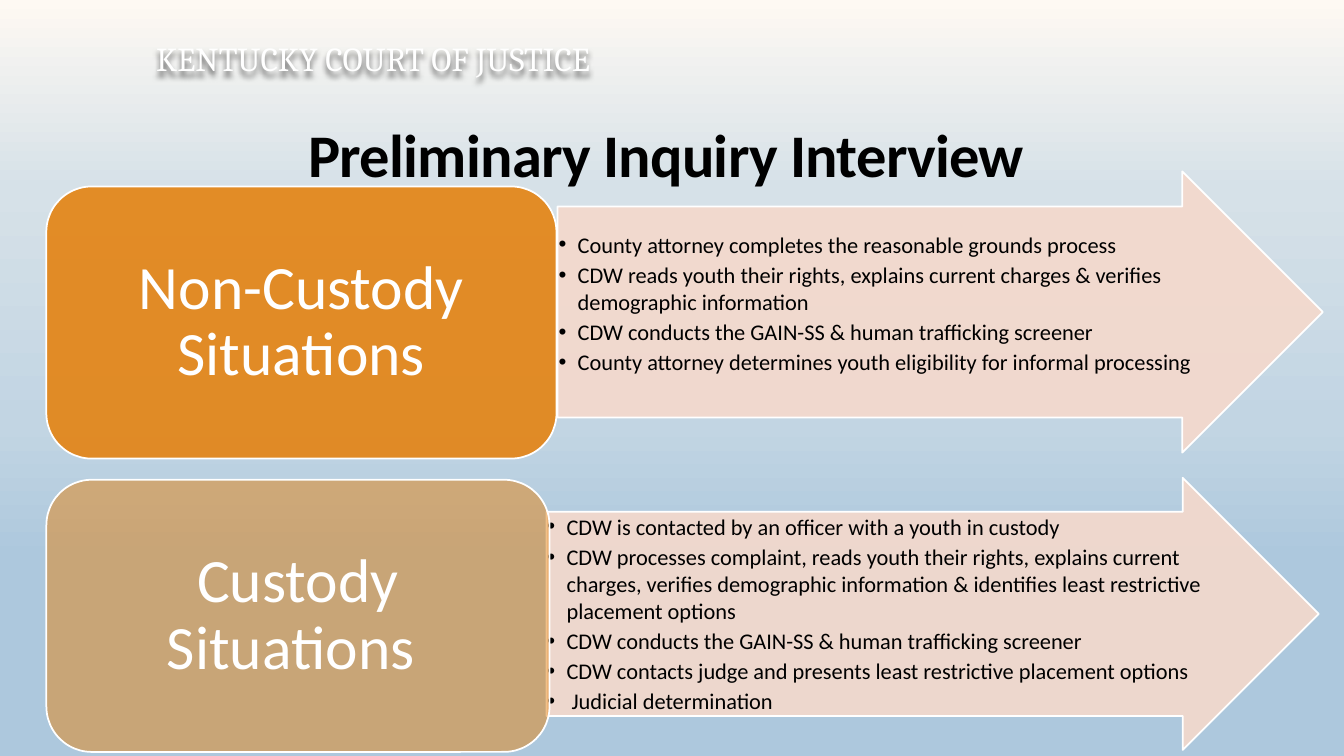
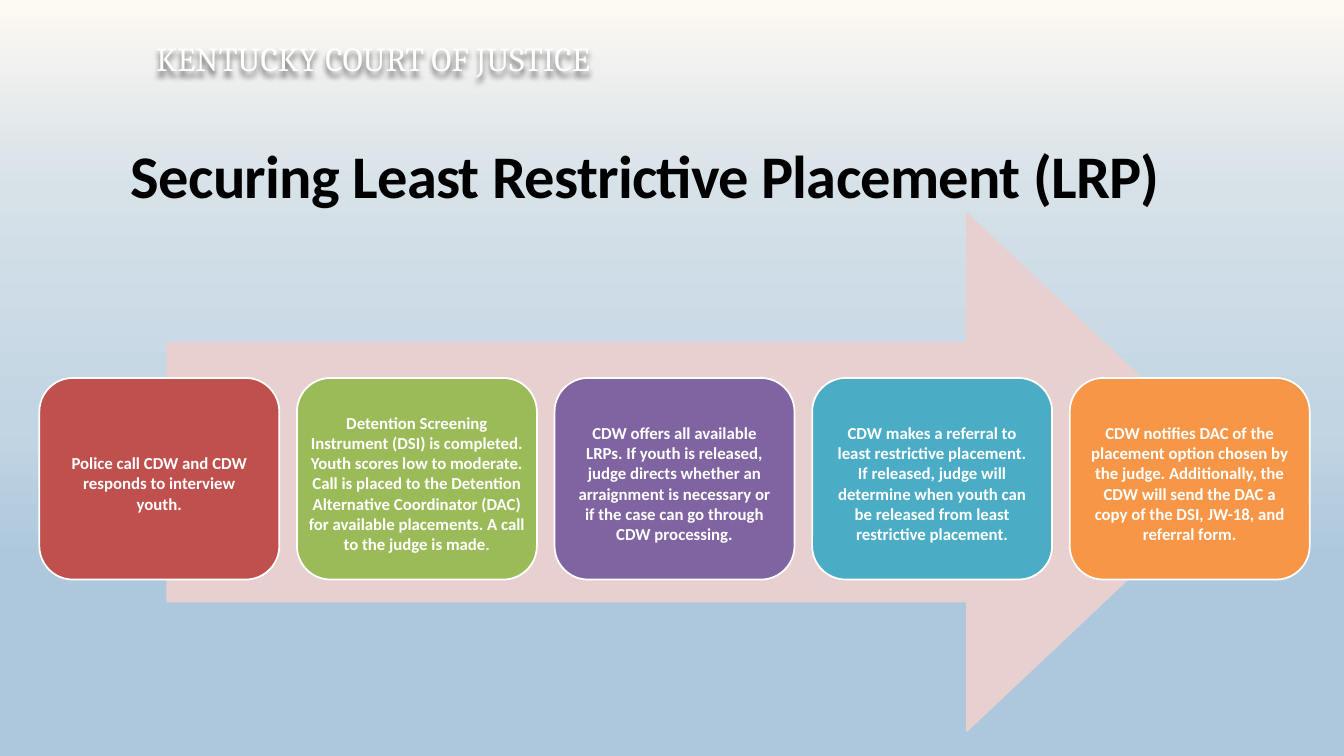
from lxml import etree
from pptx import Presentation
from pptx.dml.color import RGBColor
from pptx.enum.shapes import MSO_SHAPE as Preset
from pptx.enum.text import MSO_ANCHOR as Anchor, PP_ALIGN as Align
from pptx.oxml.ns import qn
from pptx.util import Inches, Pt

WHITE = RGBColor(0xFF, 0xFF, 0xFF)
BLACK = RGBColor(0x00, 0x00, 0x00)
ORANGE = RGBColor(0xE4, 0x83, 0x12)
PEACH = RGBColor(0xF5, 0xD9, 0xCC)
ROSE = RGBColor(0xE8, 0xD0, 0xD0)
RED = RGBColor(0xC0, 0x50, 0x4D)
GREEN = RGBColor(0x9B, 0xBB, 0x59)
PURPLE = RGBColor(0x80, 0x64, 0xA2)
TEAL = RGBColor(0x4B, 0xAC, 0xC6)
AMBER = RGBColor(0xF7, 0x96, 0x46)
SKY = [
    (0, RGBColor(0xFE, 0xF9, 0xF3)),
    (25, RGBColor(0xD6, 0xE1, 0xE8)),
    (56, RGBColor(0xC2, 0xD5, 0xE3)),
    (74, RGBColor(0xAD, 0xC8, 0xDD)),
]
BODY_FONT = "Calibri"
HEADER_FONT = "Cambria"

SITUATIONS = [
    {
        "label": "Non-Custody Situations",
        "label_box": (0.46, 1.85, 5.06, 2.7),
        "opacity": 90,
        "arrow_box": (5.53, 1.7, 7.59, 2.79),
        "top_inset": 0.24,
        "steps": [
            "County attorney completes the reasonable grounds process",
            "CDW reads youth their rights, explains current charges & verifies demographic information",
            "CDW conducts the GAIN-SS & human trafficking screener",
            "County attorney determines youth eligibility for informal processing",
        ],
    },
    {
        "label": "Custody Situations ",
        "label_box": (0.46, 4.76, 4.99, 2.7),
        "opacity": 50,
        "arrow_box": (5.42, 4.74, 7.66, 2.7),
        "top_inset": 0.01,
        "steps": [
            "CDW is contacted by an officer with a youth in custody",
            "CDW processes complaint, reads youth their rights, explains current charges, verifies demographic information & identifies least restrictive placement options",
            "CDW conducts the GAIN-SS & human trafficking screener",
            "CDW contacts judge and presents least restrictive placement options",
            " Judicial determination",
        ],
    },
]

PLACEMENT_STEPS = [
    (RED, 0.17, ["Police call CDW and CDW responds to interview youth."]),
    (GREEN, 0, [
        "Detention Screening Instrument (DSI) is completed. Youth scores low to moderate. "
        "Call is placed to the Detention Alternative Coordinator (DAC) for available "
        "placements. A call to the judge is made."]),
    (PURPLE, 0.09, [
        "CDW offers all available LRPs. If youth is released, judge directs whether an "
        "arraignment is necessary or if the case can go through CDW processing."]),
    (TEAL, 0.09, [
        "CDW makes a referral to least restrictive placement.",
        "If released, judge will determine when youth can be released from least "
        "restrictive placement."]),
    (AMBER, 0.09, [
        "CDW notifies DAC of the placement option chosen by the judge. Additionally, the "
        "CDW will send the DAC a copy of the DSI, JW-18, and referral form."]),
]


def set_background(master):
    """Give every slide the vertical sky gradient."""
    fill = master.background.fill
    fill.gradient()
    fill.gradient_angle = 270
    stops = next(master.element.iter(qn("a:gsLst")))
    for stop in list(stops):
        stops.remove(stop)
    for position, color in SKY:
        stop = etree.SubElement(stops, qn("a:gs"), pos=str(position * 1000))
        etree.SubElement(stop, qn("a:srgbClr"), val=str(color))


def add_run(paragraph, text, size, color, bold=False, font=BODY_FONT):
    """Append a formatted run to a paragraph and return it."""
    run = paragraph.add_run()
    run.text = text
    run.font.name = font
    run.font.size = Pt(size)
    run.font.bold = bold
    run.font.color.rgb = color
    return run


def set_frame(frame, anchor, insets):
    """Set wrapping, anchor and left, top, right, bottom insets."""
    frame.word_wrap = True
    frame.vertical_anchor = anchor
    left, top, right, bottom = map(Inches, insets)
    frame.margin_left, frame.margin_top = left, top
    frame.margin_right, frame.margin_bottom = right, bottom


def add_paragraphs(frame, texts):
    """Yield each text with a fresh paragraph of the frame."""
    for index, text in enumerate(texts):
        yield (frame.add_paragraph() if index else frame.paragraphs[0]), text


def add_panel(slide, preset, box, color, line=WHITE, opacity=100, adjustments=()):
    """Draw a filled, outlined preset shape."""
    panel = slide.shapes.add_shape(preset, *map(Inches, box))
    panel.shadow.inherit = False
    panel.fill.solid()
    panel.fill.fore_color.rgb = color
    if opacity < 100:
        tint = panel.fill._xPr.find(qn("a:solidFill"))[0]
        etree.SubElement(tint, qn("a:alpha"), val=str(opacity * 1000))
    panel.line.color.rgb = line
    panel.line.width = Pt(1.25)
    for index, value in enumerate(adjustments):
        panel.adjustments[index] = value
    return panel


def add_header(slide):
    """Place the court name with its soft shadow."""
    header = slide.shapes.add_textbox(*map(Inches, (1.45, 0.33, 7.79, 0.5)))
    set_frame(header.text_frame, Anchor.TOP, (0.1, 0.05, 0.1, 0.05))
    add_run(header.text_frame.paragraphs[0], "KENTUCKY COURT OF JUSTICE", 24, WHITE, font=HEADER_FONT)
    effects = etree.SubElement(header._element.spPr, qn("a:effectLst"))
    shadow = etree.SubElement(effects, qn("a:outerShdw"), blurRad="50800", dist="38100",
                              dir="5400000", algn="t", rotWithShape="0")
    shade = etree.SubElement(shadow, qn("a:srgbClr"), val=str(BLACK))
    etree.SubElement(shade, qn("a:alpha"), val="60000")


def add_title(slide, text, left, top, align):
    """Place the bold slide title."""
    title = slide.shapes.add_textbox(*map(Inches, (left, top, 11, 0.78)))
    set_frame(title.text_frame, Anchor.BOTTOM, (0.1, 0.05, 0.1, 0.05))
    paragraph = title.text_frame.paragraphs[0]
    paragraph.alignment = align
    paragraph.line_spacing = 0.85
    run = add_run(paragraph, text, 43.2, BLACK, bold=True)
    run.font._element.set("spc", "-50")


def start_slide(prs, title, left, top, align):
    """Add a blank slide with header and title."""
    slide = prs.slides.add_slide(prs.slide_layouts[6])
    add_header(slide)
    add_title(slide, title, left, top, align)
    return slide


def add_steps_arrow(slide, box, steps, top_inset):
    """Draw an arrow holding a bulleted list of steps."""
    arrow = add_panel(slide, Preset.RIGHT_ARROW, box, PEACH, opacity=90, adjustments=(0.75, 0.5))
    set_frame(arrow.text_frame, Anchor.TOP, (0.01, top_inset, 0.01, 0.01))
    for paragraph, step in add_paragraphs(arrow.text_frame, steps):
        properties = paragraph._p.get_or_add_pPr()
        properties.set("marL", str(Inches(0.19)))
        properties.set("indent", str(-Inches(0.19)))
        etree.SubElement(properties, qn("a:buFont"), typeface="Arial")
        etree.SubElement(properties, qn("a:buChar"), char="•")
        paragraph.alignment = Align.LEFT
        paragraph.space_after = Pt(2.4)
        add_run(paragraph, step, 16, BLACK)


def add_situation_label(slide, box, label, opacity):
    """Draw the large rounded label of a situation."""
    panel = add_panel(slide, Preset.ROUNDED_RECTANGLE, box, ORANGE, opacity=opacity)
    set_frame(panel.text_frame, Anchor.MIDDLE, (0.18, 0.09, 0.18, 0.09))
    paragraph = panel.text_frame.paragraphs[0]
    paragraph.alignment = Align.CENTER
    paragraph.line_spacing = 0.9
    add_run(paragraph, label, 44, WHITE)


def add_step_row(slide, box, steps, step_width):
    """Spread rounded step cards evenly across the box."""
    left, top, width, height = box
    pitch = (width - step_width) / (len(steps) - 1)
    for index, (color, inset, texts) in enumerate(steps):
        card_box = (left + index * pitch, top, step_width, height)
        card = add_panel(slide, Preset.ROUNDED_RECTANGLE, card_box, color)
        set_frame(card.text_frame, Anchor.MIDDLE, (inset, 0.09, inset, 0))
        for paragraph, text in add_paragraphs(card.text_frame, texts):
            paragraph.alignment = Align.CENTER
            add_run(paragraph, text, 12, WHITE, bold=True)


def build_interview_slide(prs):
    """Build the comparison of non-custody and custody situations."""
    slide = start_slide(prs, "Preliminary Inquiry Interview ", 1.17, 1.15, Align.CENTER)
    for situation in SITUATIONS:
        add_steps_arrow(slide, situation["arrow_box"], situation["steps"], situation["top_inset"])
        add_situation_label(slide, situation["label_box"], situation["label"], situation["opacity"])


def build_placement_slide(prs):
    """Build the placement process along one arrow."""
    slide = start_slide(prs, "Securing Least Restrictive Placement (LRP)", 1.2, 1.36, Align.LEFT)
    add_panel(slide, Preset.RIGHT_ARROW, (1.66, 2.12, 10.65, 5.13), ROSE, line=ROSE,
              adjustments=(0.5, 0.53))
    add_step_row(slide, (0.39, 3.75, 12.6, 2), PLACEMENT_STEPS, 2.38)


def main():
    """Build and save the presentation."""
    prs = Presentation()
    prs.slide_width = Inches(13.33)
    prs.slide_height = Inches(7.5)
    set_background(prs.slide_master)
    build_interview_slide(prs)
    build_placement_slide(prs)
    prs.save("out.pptx")


if __name__ == "__main__":
    main()
